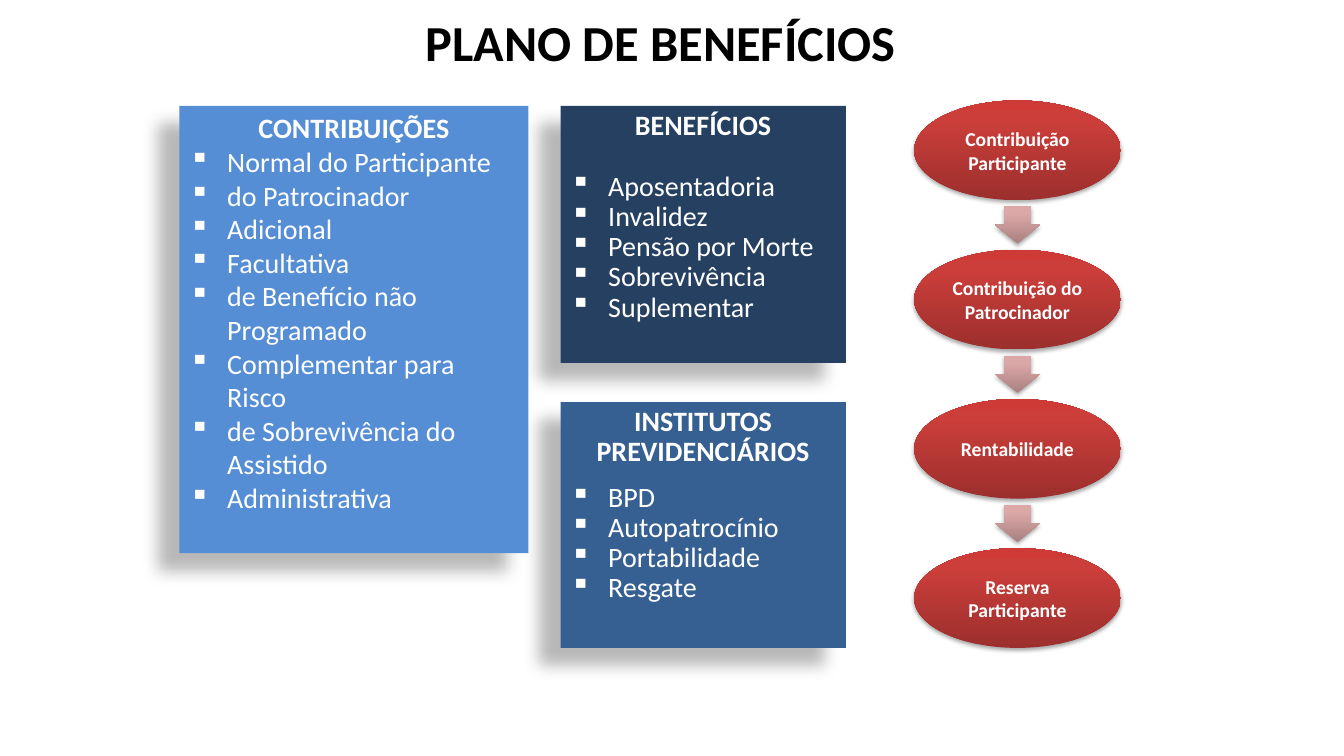
from dataclasses import dataclass

from lxml import etree
from pptx import Presentation
from pptx.dml.color import RGBColor
from pptx.enum.shapes import MSO_SHAPE as Shape
from pptx.enum.text import MSO_ANCHOR as Anchor, PP_ALIGN as Align
from pptx.oxml import parse_xml
from pptx.oxml.ns import nsdecls, qn
from pptx.util import Pt


@dataclass(frozen=True)
class Theme:
    """Colours, type sizes and shadows of the slide."""
    font: str = "Calibri"
    ink: str = "000000"
    light: str = "FFFFFF"
    sky: str = "558ED5"
    navy: str = "254061"
    steel: str = "376092"
    red: tuple = ((0, "9C2F2D"), (80, "CB3E3A"), (100, "CE3B37"))
    rose: tuple = ((0, "A98180"), (80, "DBA7A7"), (100, "DDA7A6"))
    title_size: float = 36
    panel_size: float = 20
    step_size: float = 14
    panel_shadow: tuple = (28, 11.8, 19.7, 141)
    step_shadow: tuple = (35, 3.1, 1.8, 90)


THEME = Theme()


def add_shadow(shape, opacity, blur, distance, angle):
    """Give the shape a soft black outer shadow."""
    shape.shadow.inherit = False
    effects = shape._element.spPr.find(qn("a:effectLst"))
    effects.append(parse_xml(
        f'<a:outerShdw {nsdecls("a")} blurRad="{Pt(blur)}" dist="{Pt(distance)}" '
        f'dir="{angle * 60000}" algn="ctr" rotWithShape="0"><a:srgbClr val="{THEME.ink}">'
        f'<a:alpha val="{opacity * 1000}"/></a:srgbClr></a:outerShdw>'))


def fill_gradient(shape, stops):
    """Fill the shape with a gradient that runs from bottom to top."""
    marks = "".join(f'<a:gs pos="{place * 1000}"><a:srgbClr val="{color}"/></a:gs>'
                    for place, color in stops)
    gradient = parse_xml(
        f'<a:gradFill {nsdecls("a")} rotWithShape="0"><a:gsLst>{marks}</a:gsLst>'
        '<a:lin ang="16200000" scaled="0"/></a:gradFill>')
    shape._element.spPr.find(qn("a:prstGeom")).addnext(gradient)


def add_figure(page, kind, box, shadow):
    """Place an unlined preset shape with a shadow in the box."""
    shape = page.shapes.add_shape(kind, *map(Pt, box))
    shape.line.fill.background()
    add_shadow(shape, *shadow)
    return shape


def style_para(para, size, color, bold=True, align=Align.CENTER, spacing=None):
    """Set the alignment, spacing and font of a paragraph."""
    para.alignment = align
    para.line_spacing = spacing
    for span in para.runs:
        span.font.name = THEME.font
        span.font.size = Pt(size)
        span.font.bold = bold
        span.font.color.rgb = RGBColor.from_string(color)


def add_bullet(para):
    """Give the paragraph a square bullet and a hanging indent."""
    props = para._p.get_or_add_pPr()
    props.set("marL", str(Pt(27)))
    props.set("indent", str(-Pt(27)))
    etree.SubElement(props, qn("a:buChar")).set("char", "▪")


def add_title(page, box, text):
    """Write the slide title in the box."""
    frame = page.shapes.add_textbox(*map(Pt, box)).text_frame
    frame.word_wrap = True
    frame.text = text
    style_para(frame.paragraphs[0], THEME.title_size, THEME.ink, spacing=0.9)


def add_panel(page, box, color, heading, items, gap=0, spacing=None):
    """Draw a panel with a heading and a bulleted list."""
    panel = add_figure(page, Shape.RECTANGLE, box, THEME.panel_shadow)
    panel.fill.solid()
    panel.fill.fore_color.rgb = RGBColor.from_string(color)
    frame = panel.text_frame
    frame.word_wrap = True
    frame.vertical_anchor = Anchor.TOP
    frame.text = "\n".join([heading, *items])
    title, *entries = frame.paragraphs
    style_para(title, THEME.panel_size, THEME.light, spacing=spacing)
    for para in entries:
        add_bullet(para)
        style_para(para, THEME.panel_size, THEME.light, False, Align.LEFT, spacing)
    if gap:
        entries[0].space_before = Pt(gap)


def add_step(page, box, text):
    """Draw one labelled ellipse of the flow."""
    step = add_figure(page, Shape.OVAL, box, THEME.step_shadow)
    fill_gradient(step, THEME.red)
    frame = step.text_frame
    frame.word_wrap = True
    frame.vertical_anchor = Anchor.MIDDLE
    frame.margin_left = frame.margin_right = Pt(4.4)
    frame.margin_top = frame.margin_bottom = Pt(4.4)
    frame.text = text
    style_para(frame.paragraphs[0], THEME.step_size, THEME.light, spacing=Pt(17))


def add_flow(page, box, labels):
    """Stack ellipses down the box with an arrow in each gap."""
    left, top, width, height = box
    step_height = 71.2
    pitch = (height - step_height) / (len(labels) - 1)
    long, wide = 26.6, 32
    for index, label in enumerate(labels):
        step_top = top + index * pitch
        if index:
            middle = step_top - (pitch - step_height) / 2
            arrow_box = (left + (width - long) / 2, middle - wide / 2, long, wide)
            arrow = add_figure(page, Shape.RIGHT_ARROW, arrow_box, THEME.step_shadow)
            arrow.adjustments[0] = 0.6
            arrow.adjustments[1] = 0.5
            arrow.rotation = 90
            fill_gradient(arrow, THEME.rose)
        add_step(page, (left, step_top, width, step_height), label)


def main():
    """Build the slide and save the deck."""
    deck = Presentation()
    deck.slide_width, deck.slide_height = Pt(960), Pt(540)
    page = deck.slides.add_slide(deck.slide_layouts[6])
    add_panel(page, (400.4, 75.6, 203.8, 183.6), THEME.navy, "BENEFÍCIOS",
              ["Aposentadoria", "Invalidez", "Pensão por Morte",
               "Sobrevivência", "Suplementar"], gap=22, spacing=0.9)
    add_panel(page, (400.4, 287.2, 203.8, 175.6), THEME.steel, "INSTITUTOS PREVIDENCIÁRIOS",
              ["BPD", "Autopatrocínio", "Portabilidade", "Resgate"], gap=11, spacing=0.9)
    add_panel(page, (128.2, 75.6, 249.2, 319.6), THEME.sky, "CONTRIBUIÇÕES",
              ["Normal do Participante", "do Patrocinador", "Adicional", "Facultativa",
               "de Benefício não Programado", "Complementar para Risco",
               "de Sobrevivência do Assistido", "Administrativa"])
    add_title(page, (140.4, 9.4, 663.2, 46.8), "PLANO DE BENEFÍCIOS")
    add_flow(page, (653, 71.8, 147.6, 391),
             ["Contribuição Participante", "Contribuição do Patrocinador",
              "Rentabilidade", "Reserva Participante"])
    deck.save("out.pptx")


if __name__ == "__main__":
    main()
